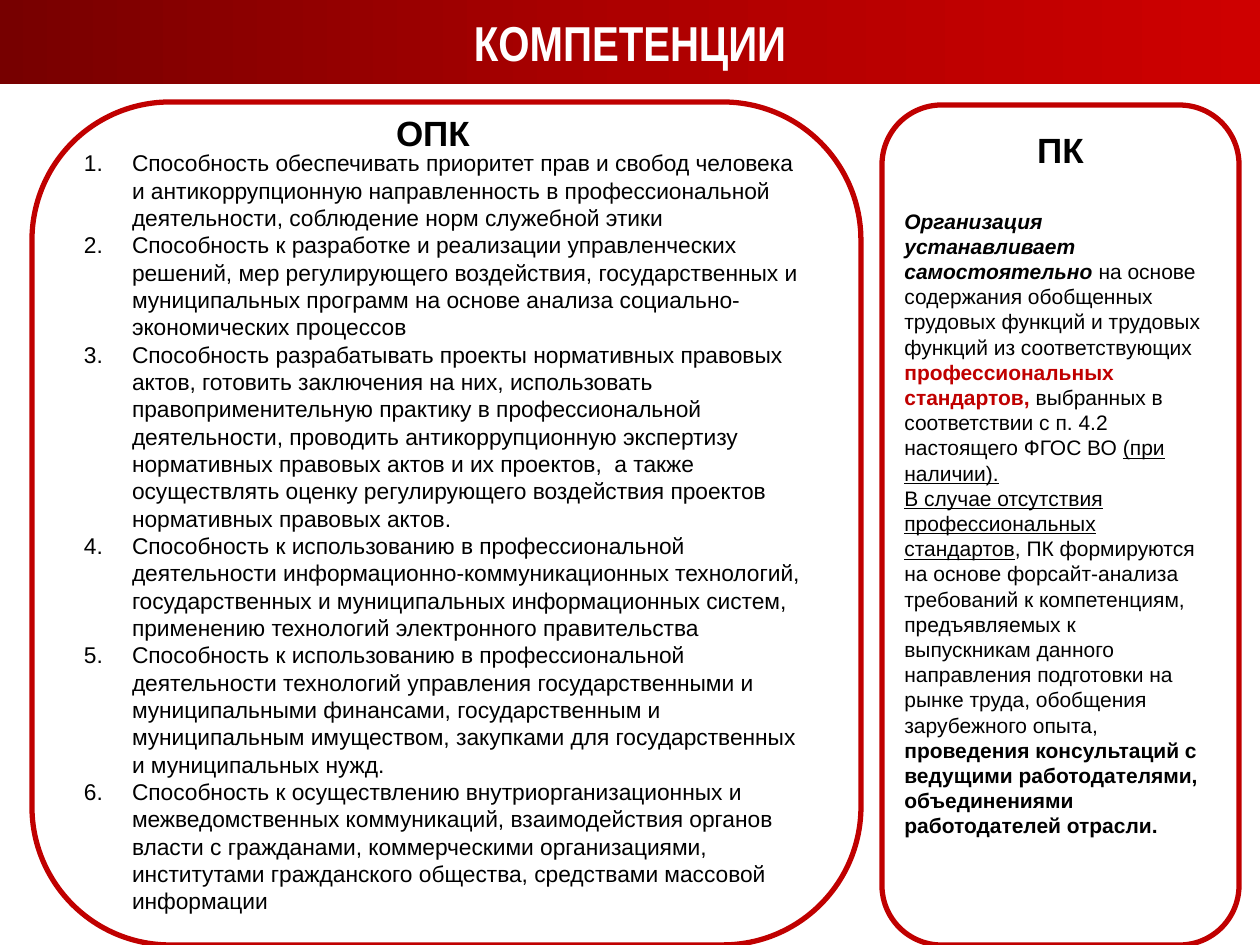
from copy import deepcopy

from lxml import etree
from pptx import Presentation
from pptx import util as u
from pptx.dml.color import RGBColor
from pptx.enum import shapes, text
from pptx.oxml.ns import qn

SCALE = 914400 / 126
RED, BLACK, WHITE = "C00000", "000000", "FFFFFF"
GRADIENT = [(0, "770000"), (0.5, "AD0000"), (1, "CE0000")]

COMPETENCES = [
    "Способность обеспечивать приоритет прав и свобод человека и антикоррупционную "
    "направленность в профессиональной деятельности, соблюдение норм служебной этики",
    "Способность к разработке и реализации управленческих решений, мер регулирующего "
    "воздействия, государственных и муниципальных программ на основе анализа "
    "социально-экономических процессов",
    "Способность разрабатывать проекты нормативных правовых актов, готовить заключения "
    "на них, использовать правоприменительную практику в профессиональной деятельности, "
    "проводить антикоррупционную экспертизу нормативных правовых актов и их проектов,  "
    "а также осуществлять оценку регулирующего воздействия проектов нормативных "
    "правовых актов.",
    "Способность к использованию в профессиональной деятельности "
    "информационно-коммуникационных технологий, государственных и муниципальных "
    "информационных систем, применению технологий электронного правительства",
    "Способность к использованию в профессиональной деятельности технологий управления "
    "государственными и муниципальными финансами, государственным и муниципальным "
    "имуществом, закупками для государственных и муниципальных нужд.",
    "Способность к осуществлению внутриорганизационных и межведомственных коммуникаций, "
    "взаимодействия органов власти с гражданами, коммерческими организациями, "
    "институтами гражданского общества, средствами массовой информации",
]

STANDARDS = [
    [
        ("Организация устанавливает самостоятельно ", {"bold": True, "italic": True}),
        ("на основе содержания обобщенных трудовых функций и трудовых функций "
         "из соответствующих ", {}),
        ("профессиональных стандартов,", {"bold": True, "color": RED}),
        (" выбранных в соответствии с п. 4.2 настоящего ФГОС ВО ", {}),
        ("(при наличии).", {"underline": True}),
    ],
    [
        ("В случае отсутствия профессиональных стандартов", {"underline": True}),
        (", ПК формируются на основе форсайт-анализа требований к компетенциям, "
         "предъявляемых к выпускникам данного направления подготовки на рынке труда, "
         "обобщения зарубежного опыта, ", {}),
        ("проведения консультаций с ведущими работодателями, объединениями "
         "работодателей отрасли.", {"bold": True}),
    ],
]


def px(n):
    return u.Emu(round(n * SCALE))


def rgb(color):
    return RGBColor.from_string(color)


def place(sp, x, y, w, h):
    sp.left, sp.top, sp.width, sp.height = px(x), px(y), px(w), px(h)


def add_run(p, words, size, color=BLACK, font="Arial", bold=False, italic=False, underline=False):
    r = p.add_run()
    r.text = words
    f = r.font
    f.name, f.size, f.color.rgb = font, u.Pt(size), rgb(color)
    f.bold, f.italic, f.underline = bold, italic, underline


def paragraphs(tf, items):
    for i, item in enumerate(items):
        yield (tf.add_paragraph() if i else tf.paragraphs[0]), item


def add_heading(tf, words, size=20, **style):
    p = tf.paragraphs[0]
    p.alignment = text.PP_ALIGN.CENTER
    add_run(p, words, size, bold=True, **style)


def fill_gradient(sp, stops):
    sp.fill.gradient()
    sp.fill.gradient_angle = 0
    gs_list = sp.element.spPr.find(".//" + qn("a:gsLst"))
    gs_list.append(deepcopy(gs_list[0]))
    for stop, (position, color) in zip(sp.fill.gradient_stops, stops):
        stop.position = position
        stop.color.rgb = rgb(color)


def format_title(sp, words):
    place(sp, 0, 0, 1260, 84)
    fill_gradient(sp, GRADIENT)
    sp.text_frame.vertical_anchor = text.MSO_ANCHOR.MIDDLE
    sp.text_frame.auto_size = text.MSO_AUTO_SIZE.NONE
    add_heading(sp.text_frame, words, 28, color=WHITE, font="Arial Narrow")


def add_panel(s, x, y, w, h):
    sp = s.shapes.add_shape(shapes.MSO_SHAPE.ROUNDED_RECTANGLE, px(x), px(y), px(w), px(h))
    sp.shadow.inherit = False
    sp.fill.solid()
    sp.fill.fore_color.rgb = rgb(WHITE)
    sp.line.color.rgb = rgb(RED)
    sp.line.width = u.Pt(3)
    sp.text_frame.vertical_anchor = text.MSO_ANCHOR.TOP
    return sp


def add_text_box(s, x, y, w, h, wrap=True):
    tf = s.shapes.add_textbox(px(x), px(y), px(w), px(h)).text_frame
    tf.word_wrap = wrap
    tf.auto_size = text.MSO_AUTO_SIZE.SHAPE_TO_FIT_TEXT
    return tf


def format_numbered_list(sp, items):
    place(sp, 84, 149, 724, 768)
    tf = sp.text_frame
    tf.auto_size = text.MSO_AUTO_SIZE.NONE
    tf.vertical_anchor = text.MSO_ANCHOR.TOP
    tf.margin_left = tf.margin_right = tf.margin_top = tf.margin_bottom = 0
    for p, words in paragraphs(tf, items):
        p.space_before = u.Pt(0)
        add_run(p, words, 13)
        props = p._p.get_or_add_pPr()
        props.set("marL", str(px(48)))
        props.set("indent", str(-px(48)))
        etree.SubElement(props, qn("a:buFont"), typeface="+mj-lt")
        etree.SubElement(props, qn("a:buAutoNum"), type="arabicPeriod")


def main():
    prs = Presentation()
    prs.slide_width, prs.slide_height = px(1260), px(945)
    s = prs.slides.add_slide(prs.slide_layouts[1])
    title, body = s.placeholders
    format_title(title, "КОМПЕТЕНЦИИ")

    add_panel(s, 32, 102, 829, 843)
    s.shapes._spTree.append(body.element)
    format_numbered_list(body, COMPETENCES)
    add_heading(add_text_box(s, 383, 105, 100, 55, wrap=False), "ОПК")

    add_heading(add_panel(s, 882, 105, 357, 840).text_frame, "ПК")
    tf = add_text_box(s, 892, 202, 325, 649)
    for p, runs in paragraphs(tf, STANDARDS):
        for words, style in runs:
            add_run(p, words, 12, **style)

    prs.save("out.pptx")


if __name__ == "__main__":
    main()
